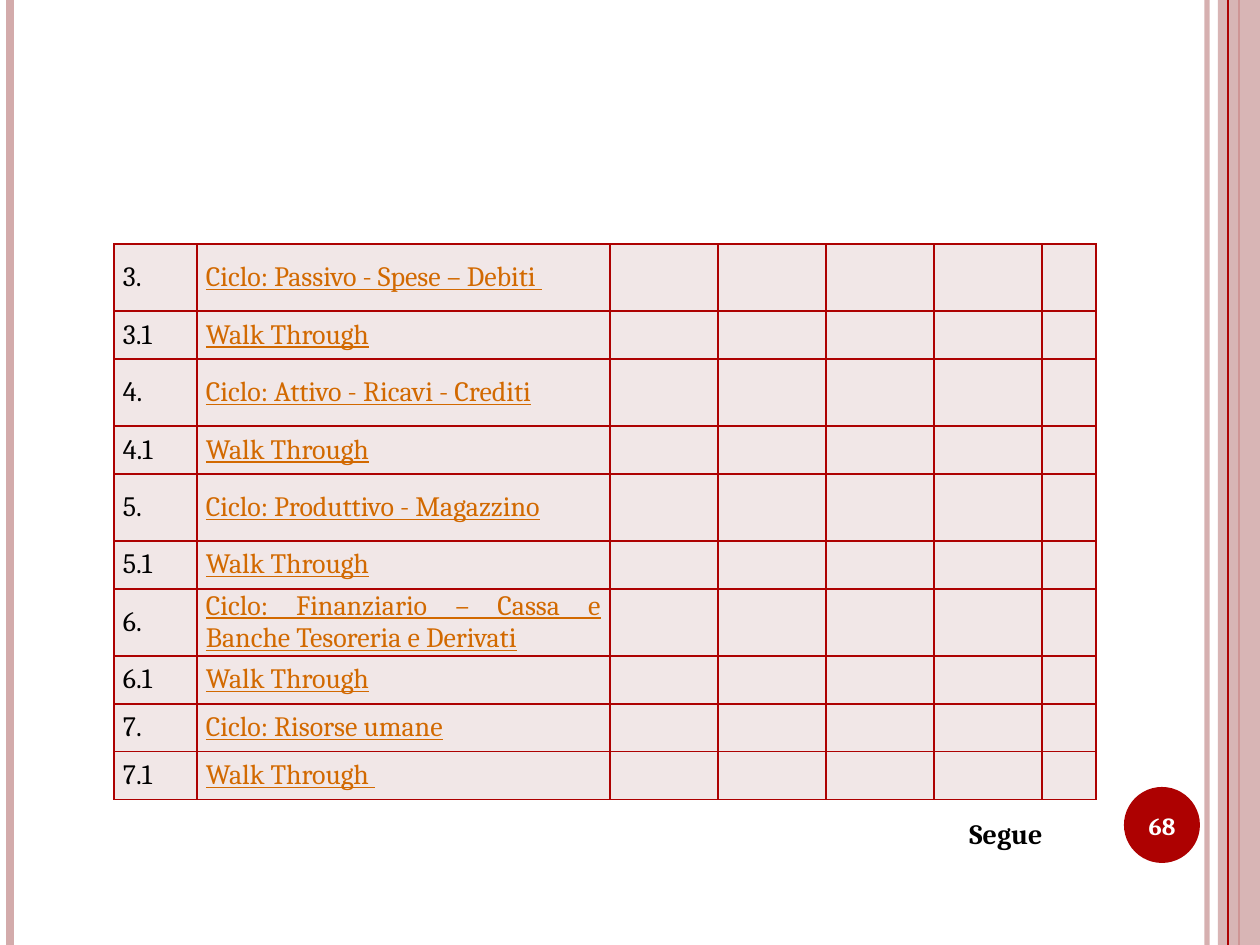
from lxml import etree
from pptx import Presentation
from pptx import util as u
from pptx.dml.color import RGBColor
from pptx.enum import shapes, text
from pptx.oxml.ns import qn

SCALE = 914400 / 126
FONT = "Cambria"
RED, PINK, PALE = "AD0101", "D3ABAB", "F1E7E7"
ORANGE, BLACK, WHITE = "D26900", "000000", "FFFFFF"
COLUMNS = [83, 413] + [108] * 4 + [54]
TALL, SHORT = 67, 48
ROWS = [
    ("3.", "Ciclo: Passivo - Spese – Debiti ", TALL),
    ("3.1", "Walk Through", SHORT),
    ("4.", "Ciclo: Attivo - Ricavi - Crediti", TALL),
    ("4.1", "Walk Through", SHORT),
    ("5.", "Ciclo: Produttivo - Magazzino", TALL),
    ("5.1", "Walk Through", SHORT),
    ("6.", "Ciclo: Finanziario – Cassa e Banche Tesoreria e Derivati", TALL),
    ("6.1", "Walk Through", SHORT),
    ("7.", "Ciclo: Risorse umane", SHORT),
    ("7.1", "Walk Through ", SHORT),
]


def px(value):
    return u.Emu(round(value * SCALE))


def color(value):
    return RGBColor.from_string(value)


def set_alpha(fill_format, percent):
    element = fill_format.fore_color._xFill[0]
    etree.SubElement(element, qn("a:alpha"), val=str(percent * 1000))


class SlideBuilder:
    def __init__(self, slide):
        self.slide = slide

    def vertical(self, x, line_color, points, alpha=100):
        line = self.slide.shapes.add_connector(
            shapes.MSO_CONNECTOR.STRAIGHT, px(x), 0, px(x), px(945))
        line.line.color.rgb = color(line_color)
        line.line.width = u.Pt(points)
        if alpha < 100:
            set_alpha(line.line.fill, alpha)
        etree.SubElement(line._element.spPr, qn("a:effectLst"))

    def shape(self, kind, left, top, width, height, fill, alpha=100):
        shape = self.slide.shapes.add_shape(
            kind, px(left), px(top), px(width), px(height))
        shape.shadow.inherit = False
        shape.fill.solid()
        shape.fill.fore_color.rgb = color(fill)
        shape.line.fill.background()
        if alpha < 100:
            set_alpha(shape.fill, alpha)

    def style(self, paragraph, size, font_color, bold=False, underline=False):
        font = paragraph.font
        font.name, font.size = FONT, u.Pt(size)
        font.bold, font.underline = bold, underline
        font.color.rgb = color(font_color)

    def label(self, words, left, top, width, height, size, font_color,
              align=text.PP_ALIGN.LEFT, anchor=text.MSO_ANCHOR.TOP):
        frame = self.slide.shapes.add_textbox(
            px(left), px(top), px(width), px(height)).text_frame
        frame.word_wrap = True
        frame.vertical_anchor = anchor
        paragraph = frame.paragraphs[0]
        paragraph.text = words
        paragraph.alignment = align
        self.style(paragraph, size, font_color, bold=True)

    def cell(self, cell, words, font_color, underline):
        cell.fill.solid()
        cell.fill.fore_color.rgb = color(PALE)
        cell.vertical_anchor = text.MSO_ANCHOR.MIDDLE
        cell.margin_left = cell.margin_right = px(9)
        cell.margin_top = cell.margin_bottom = 0
        if words:
            paragraph = cell.text_frame.paragraphs[0]
            paragraph.text = words
            paragraph.alignment = text.PP_ALIGN.JUSTIFY
            paragraph.space_before = paragraph.space_after = u.Pt(4)
            self.style(paragraph, 16, font_color, underline=underline)
        self.borders(cell)

    def borders(self, cell):
        properties = cell._tc.get_or_add_tcPr()
        for index, side in enumerate(("lnL", "lnR", "lnT", "lnB")):
            line = etree.Element(qn(f"a:{side}"), w=str(u.Pt(1)))
            fill = etree.SubElement(line, qn("a:solidFill"))
            etree.SubElement(fill, qn("a:srgbClr"), val=RED)
            properties.insert(index, line)

    def table(self, left, top, columns, rows):
        heights = [row[-1] for row in rows]
        table = self.slide.shapes.add_table(
            len(rows), len(columns), px(left), px(top),
            px(sum(columns)), px(sum(heights))).table
        table.first_row = table.horz_banding = False
        for column, width in zip(table.columns, columns):
            column.width = px(width)
        for row, (number, title, height) in zip(table.rows, rows):
            row.height = px(height)
            for index, cell in enumerate(row.cells):
                words = {0: number, 1: title}.get(index, "")
                is_title = index == 1
                self.cell(cell, words, ORANGE if is_title else BLACK, is_title)


def main():
    presentation = Presentation()
    presentation.slide_width, presentation.slide_height = px(1260), px(945)
    builder = SlideBuilder(
        presentation.slides.add_slide(presentation.slide_layouts[6]))
    builder.vertical(1207, PINK, 3, alpha=93)
    builder.vertical(10, PINK, 4.5)
    builder.vertical(1239, RED, 1.5)
    builder.shape(shapes.MSO_SHAPE.RECTANGLE, 1218, 0, 42, 945, PINK, alpha=87)
    builder.vertical(1228, RED, 0.75)
    builder.shape(shapes.MSO_SHAPE.OVAL, 1124, 787, 76, 76, RED)
    builder.table(114, 244, COLUMNS, ROWS)
    builder.label("68", 1120, 790, 84, 72, 14, WHITE,
                  text.PP_ALIGN.CENTER, text.MSO_ANCHOR.MIDDLE)
    builder.label("Segue", 957, 810, 139, 47, 16, BLACK)
    presentation.save("out.pptx")


if __name__ == "__main__":
    main()
